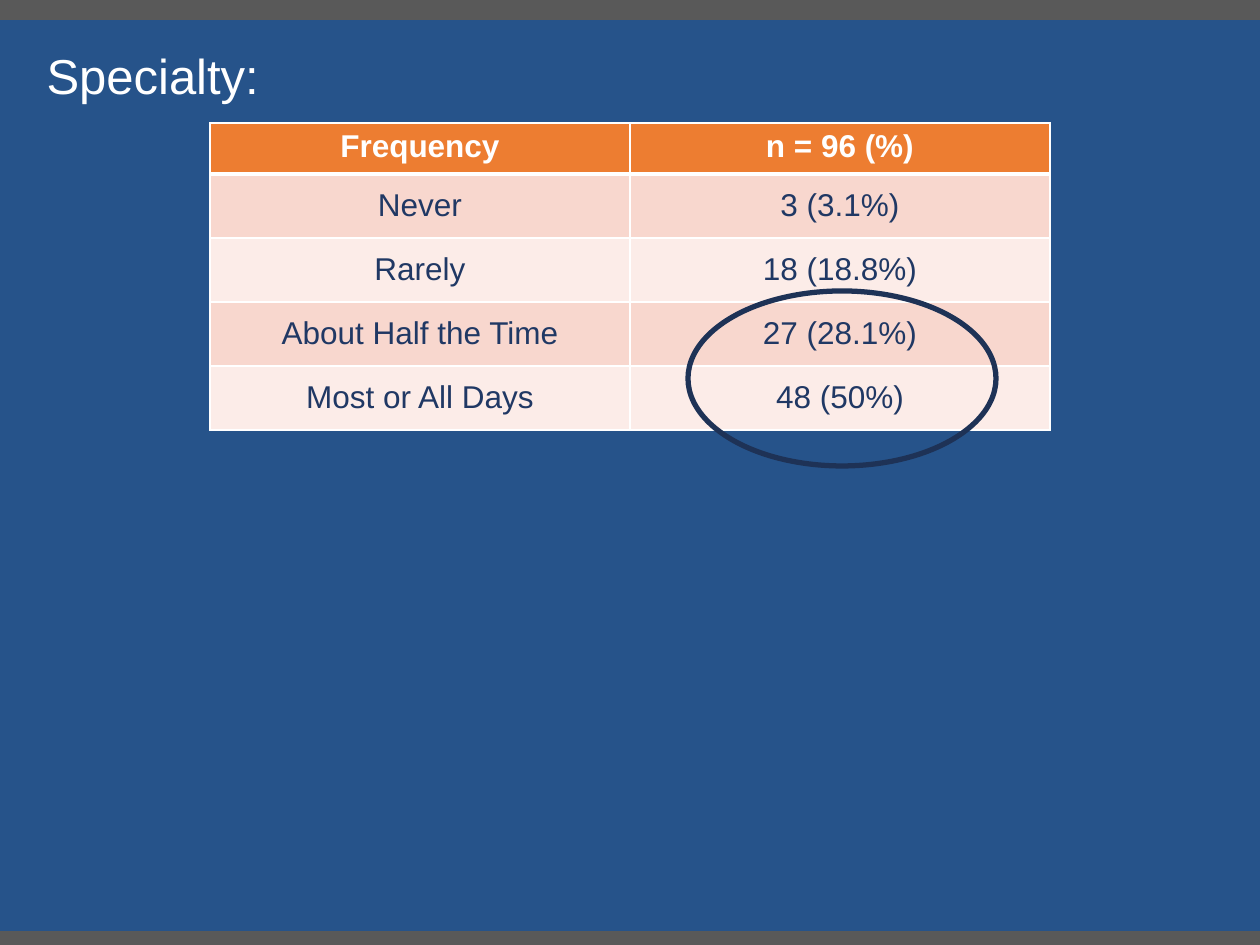
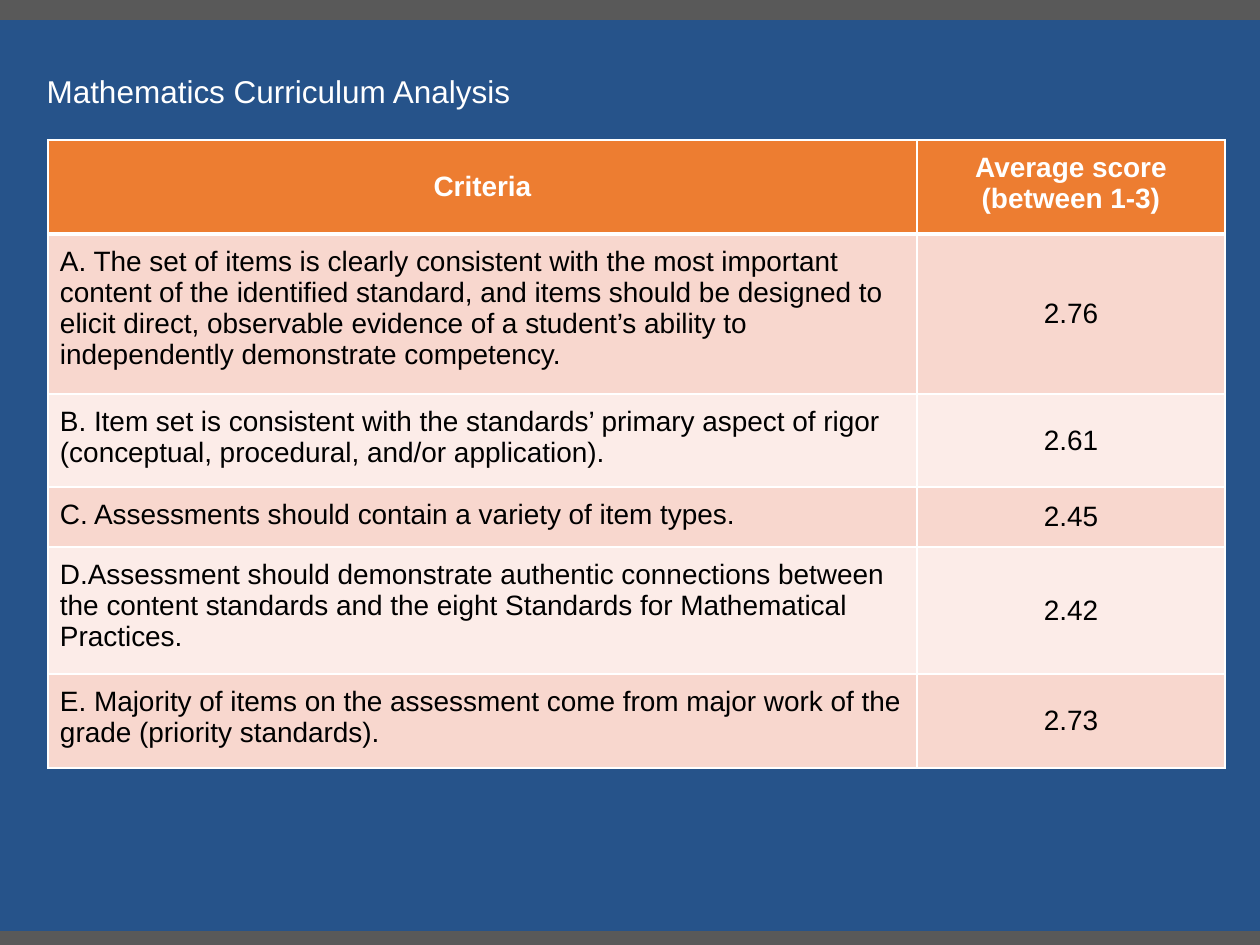
import pptx
import pptx.util
import pptx.dml.color
import pptx.enum.shapes
import pptx.enum.text
import pptx.oxml
import pptx.oxml.ns

COLORS = {
    "background": "26538A",
    "band": "595959",
    "white": "FFFFFF",
    "header": "ED7D31",
    "odd_row": "F8D7CE",
    "even_row": "FCECE8",
    "navy": "203864",
    "black": "000000",
    "ring": "1E3256",
}
FONT = "Arial"
EMU_PER_PX = 914400 / 126
WIDTH, HEIGHT, BAND = 1260, 945, 20
CELL_MARGIN = 12
CENTER = pptx.enum.text.PP_ALIGN.CENTER
LEFT = pptx.enum.text.PP_ALIGN.LEFT
TOP = pptx.enum.text.MSO_ANCHOR.TOP
MIDDLE = pptx.enum.text.MSO_ANCHOR.MIDDLE


def px(*lengths):
    return [pptx.util.Emu(round(length * EMU_PER_PX)) for length in lengths]


def style_text(frame, size, color, align, bold=False):
    for paragraph in frame.paragraphs:
        paragraph.alignment = align
        for run in paragraph.runs:
            run.font.name = FONT
            run.font.size = pptx.util.Pt(size)
            run.font.bold = bold
            run.font.color.rgb = pptx.dml.color.RGBColor.from_string(COLORS[color])


pages = [
    {
        "title": "Specialty:",
        "title_box": (34, 39, 1177, 72),
        "title_size": 28,
        "table_corner": (210, 123),
        "columns": (420, 420),
        "heights": (51, 64, 64, 64, 64),
        "text_size": 18,
        "text_color": "navy",
        "first_align": CENTER,
        "first_anchor": MIDDLE,
        "header_anchors": (TOP, TOP),
        "header_margin": 6,
        "rows": [
            ("Frequency", "n = 96 (%)"),
            ("Never", "3 (3.1%)"),
            ("Rarely", "18 (18.8%)"),
            ("About Half the Time", "27 (28.1%)"),
            ("Most or All Days", "48 (50%)"),
        ],
        "ring": (688, 291, 308, 175),
    },
    {
        "title": "Mathematics Curriculum Analysis",
        "title_box": (34, 66, 979, 50),
        "title_size": 18,
        "table_corner": (48, 140),
        "columns": (869, 308),
        "heights": (94, 160, 93, 60, 127, 94),
        "text_size": 16,
        "text_color": "black",
        "first_align": LEFT,
        "first_anchor": TOP,
        "header_anchors": (MIDDLE, TOP),
        "header_margin": CELL_MARGIN,
        "rows": [
            ("Criteria", "Average score\n(between 1-3)"),
            ("A. The set of items is clearly consistent with the most important content of "
             "the identified standard, and items should be designed to elicit direct, "
             "observable evidence of a student’s ability to independently demonstrate "
             "competency.", "2.76"),
            ("B. Item set is consistent with the standards’ primary aspect of rigor "
             "(conceptual, procedural, and/or application).", "2.61"),
            ("C. Assessments should contain a variety of item types.", "2.45"),
            ("D.Assessment should demonstrate authentic connections between the content "
             "standards and the eight Standards for Mathematical Practices.", "2.42"),
            ("E. Majority of items on the assessment come from major work of the grade "
             "(priority standards).", "2.73"),
        ],
        "ring": None,
    },
]

deck = pptx.Presentation()
deck.slide_width, deck.slide_height = px(WIDTH, HEIGHT)
backdrop = deck.slide_master.background.fill
backdrop.solid()
backdrop.fore_color.rgb = pptx.dml.color.RGBColor.from_string(COLORS["background"])

for page in pages:
    slide = deck.slides.add_slide(deck.slide_layouts[5])

    for band_top in (HEIGHT - 14, 0):
        band = slide.shapes.add_shape(
            pptx.enum.shapes.MSO_SHAPE.RECTANGLE, *px(0, band_top, WIDTH, BAND))
        band.shadow.inherit = False
        band.fill.solid()
        band.fill.fore_color.rgb = pptx.dml.color.RGBColor.from_string(COLORS["band"])
        band.line.fill.background()

    title = slide.shapes.title
    title.left, title.top, title.width, title.height = px(*page["title_box"])
    title.text_frame.text = page["title"]
    title.text_frame.word_wrap = True
    title.text_frame.auto_size = pptx.enum.text.MSO_AUTO_SIZE.NONE
    title.text_frame.vertical_anchor = TOP
    style_text(title.text_frame, page["title_size"], "white", LEFT)

    rows, columns, heights = page["rows"], page["columns"], page["heights"]
    scores = slide.shapes.add_table(
        len(rows), len(columns),
        *px(*page["table_corner"], sum(columns), sum(heights))).table
    for column, width in zip(scores.columns, columns):
        column.width = px(width)[0]
    for row, height in zip(scores.rows, heights):
        row.height = px(height)[0]

    for r, texts in enumerate(rows):
        is_header = r == 0
        row_color = "header" if is_header else ("odd_row" if r % 2 else "even_row")
        for c, text in enumerate(texts):
            cell = scores.cell(r, c)
            cell.text_frame.text = text
            cell.margin_left = cell.margin_right = px(CELL_MARGIN)[0]
            cell.margin_top = cell.margin_bottom = px(
                page["header_margin"] if is_header else CELL_MARGIN)[0]
            if is_header:
                cell.vertical_anchor = page["header_anchors"][c]
                style_text(cell.text_frame, page["text_size"], "white", CENTER, True)
            else:
                cell.vertical_anchor = page["first_anchor"] if c == 0 else MIDDLE
                style_text(cell.text_frame, page["text_size"], page["text_color"],
                           page["first_align"] if c == 0 else CENTER)
            cell.fill.solid()
            cell.fill.fore_color.rgb = pptx.dml.color.RGBColor.from_string(COLORS[row_color])
            properties = cell._tc.get_or_add_tcPr()
            for position, side in enumerate("LRTB"):
                under_header = (r, side) in ((0, "B"), (1, "T"))
                border_width = pptx.util.Pt(3 if under_header else 1)
                properties.insert(position, pptx.oxml.parse_xml(
                    f'<a:ln{side} {pptx.oxml.ns.nsdecls("a")} w="{border_width}">'
                    f'<a:solidFill><a:srgbClr val="{COLORS["white"]}"/></a:solidFill>'
                    f'</a:ln{side}>'))

    if page["ring"]:
        ring = slide.shapes.add_shape(
            pptx.enum.shapes.MSO_SHAPE.OVAL, *px(*page["ring"]))
        ring.shadow.inherit = False
        ring.fill.background()
        ring.line.color.rgb = pptx.dml.color.RGBColor.from_string(COLORS["ring"])
        ring.line.width = pptx.util.Pt(3)

deck.save("out.pptx")
